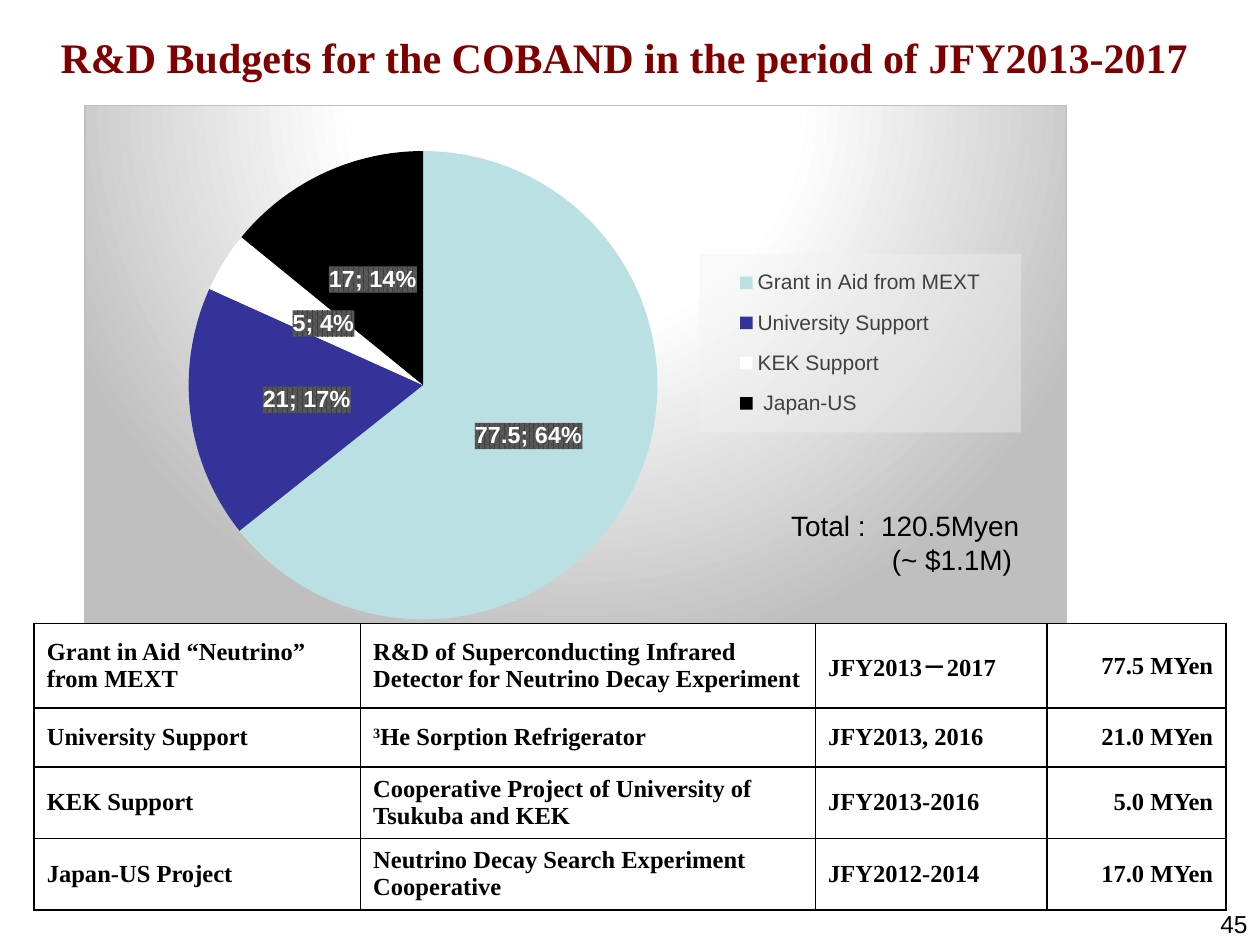
from pptx import Presentation
from pptx.chart.data import CategoryChartData
from pptx.dml.color import RGBColor
from pptx.enum.chart import XL_CHART_TYPE as ChartType
from pptx.enum.chart import XL_LABEL_POSITION as LabelPosition
from pptx.enum.chart import XL_LEGEND_POSITION as LegendPosition
from pptx.enum.text import MSO_ANCHOR as Anchor
from pptx.enum.text import PP_ALIGN as Align
from pptx.oxml import parse_xml
from pptx.oxml.ns import nsdecls, qn
from pptx.util import Cm, Pt

BLACK = RGBColor(0x00, 0x00, 0x00)
WHITE = RGBColor(0xFF, 0xFF, 0xFF)
MAROON = RGBColor(0x80, 0x00, 0x00)
AQUA = RGBColor(0xBB, 0xE0, 0xE3)
INDIGO = RGBColor(0x33, 0x33, 0x99)
CHARCOAL = RGBColor(0x40, 0x40, 0x40)
SLATE = RGBColor(0x59, 0x59, 0x59)
MIST = RGBColor(0xF2, 0xF2, 0xF2)
SILVER = RGBColor(0xBF, 0xBF, 0xBF)

SANS = "Arial"
SERIF = "Times New Roman"

SOURCES = [
    ("Grant in Aid from MEXT", 77.5, AQUA),
    ("University Support", 21, INDIGO),
    ("KEK Support", 5, WHITE),
    (" Japan-US", 17, BLACK),
]
BUDGETS = [
    ("Grant in Aid “Neutrino” from MEXT",
     "R&D of Superconducting Infrared Detector for Neutrino Decay Experiment",
     "JFY2013－2017　", "77.5 MYen"),
    ("University Support", "3He Sorption Refrigerator", "JFY2013, 2016", "21.0 MYen"),
    ("KEK Support", "Cooperative Project of University of Tsukuba and KEK",
     "JFY2013-2016", "5.0 MYen"),
    ("Japan-US Project", "Neutrino Decay Search Experiment Cooperative",
     "JFY2012-2014", "17.0 MYen"),
]
COLUMN_WIDTHS = [6.58, 9.17, 4.67, 3.6]
ROW_HEIGHTS = [1.7, 1.19, 1.34, 1.34]


def color_xml(color, alpha=100):
    return f'<a:srgbClr val="{color}"><a:alpha val="{alpha * 1000}"/></a:srgbClr>'


def shape_properties(content):
    return parse_xml(f'<c:spPr {nsdecls("c", "a")}>{content}</c:spPr>')


class SlideBuilder:
    def __init__(self, deck):
        self.page = deck.slides.add_slide(deck.slide_layouts[6])

    def style(self, font, size, color=BLACK, name=SANS, bold=False):
        font.name, font.size, font.bold = name, Pt(size), bold
        font.color.rgb = color

    def text(self, place, text, size, align=Align.LEFT, anchor=Anchor.TOP,
             wrap=True, **look):
        box = self.page.shapes.add_textbox(*map(Cm, place))
        frame = box.text_frame
        frame.text = text
        frame.word_wrap = wrap
        frame.vertical_anchor = anchor
        for para in frame.paragraphs:
            para.alignment = align
            for span in para.runs:
                self.style(span.font, size, **look)
        return frame

    def place_layout(self, parent, index, place, target=""):
        for old in parent.findall(qn("c:layout")):
            parent.remove(old)
        modes = "".join(f'<c:{axis}Mode val="edge"/>' for axis in "xy")
        sizes = "".join(f'<c:{key} val="{value}"/>' for key, value in zip("xywh", place))
        parent.insert(index, parse_xml(
            f'<c:layout {nsdecls("c")}><c:manualLayout>{target}{modes}{sizes}'
            '</c:manualLayout></c:layout>'))

    def pie(self, place, sources):
        data = CategoryChartData()
        data.categories = [name for name, _, _ in sources]
        data.add_series("Series 1", [value for _, value, _ in sources])
        chart = self.page.shapes.add_chart(ChartType.PIE, *map(Cm, place), data).chart
        chart.has_title = False
        self.style(chart.font, 10)
        space = chart._chartSpace
        stops = "".join(f'<a:gs pos="{position * 1000}">{color_xml(color)}</a:gs>'
                        for position, color in [(0, WHITE), (39, WHITE), (100, SILVER)])
        space.find(qn("c:txPr")).addprevious(shape_properties(
            f'<a:gradFill><a:gsLst>{stops}</a:gsLst><a:path path="circle">'
            '<a:fillToRect l="50000" t="-80000" r="50000" b="180000"/></a:path></a:gradFill>'
            f'<a:ln w="9525"><a:solidFill>{color_xml(SILVER)}</a:solidFill></a:ln>'))
        self.place_layout(space.chart.plotArea, 0, (0.105, 0.082, 0.479, 0.839),
                          '<c:layoutTarget val="inner"/>')
        self.legend(chart)
        plot = chart.plots[0]
        plot.vary_by_categories = True
        for index, (_, _, color) in enumerate(sources):
            fill = plot.series[0].points[index].format.fill
            fill.solid()
            fill.fore_color.rgb = color
        self.labels(plot.series[0].data_labels)

    def legend(self, chart):
        chart.has_legend = True
        legend = chart.legend
        legend.position = LegendPosition.RIGHT
        legend.include_in_layout = False
        self.style(legend.font, 12, CHARCOAL)
        element = legend._element
        self.place_layout(element, 1, (0.626, 0.266, 0.328, 0.32))
        element.find(qn("c:txPr")).addprevious(shape_properties(
            f'<a:solidFill>{color_xml(MIST, 39)}</a:solidFill>'))

    def labels(self, labels):
        labels.show_value = True
        labels.show_percentage = True
        labels.position = LabelPosition.CENTER
        self.style(labels.font, 13.3, WHITE, bold=True)
        element = labels._element
        element.find(qn("c:txPr")).addprevious(shape_properties(
            f'<a:pattFill prst="pct75"><a:fgClr>{color_xml(CHARCOAL)}</a:fgClr>'
            f'<a:bgClr>{color_xml(SLATE)}</a:bgClr></a:pattFill>'))
        flags = element.findall(qn("c:showPercent")) + element.findall(qn("c:showBubbleSize"))
        flags[-1].addnext(parse_xml(f'<c:separator {nsdecls("c")}>; </c:separator>'))

    def table(self, left, top, widths, heights, rows):
        place = (left, top, sum(widths), sum(heights))
        frame = self.page.shapes.add_table(len(rows), len(widths), *map(Cm, place))
        table = frame.table
        table.first_row = table.horz_banding = False
        for column, width in zip(table.columns, widths):
            column.width = Cm(width)
        for row, height in zip(table.rows, heights):
            row.height = Cm(height)
        for row, texts in enumerate(rows):
            for column, text in enumerate(texts):
                align = Align.RIGHT if column == len(widths) - 1 else Align.LEFT
                self.cell(table.cell(row, column), text, align)
        return table

    def cell(self, cell, text, align):
        cell.text = text
        cell.vertical_anchor = Anchor.MIDDLE
        cell.fill.solid()
        cell.fill.fore_color.rgb = WHITE
        para = cell.text_frame.paragraphs[0]
        para.alignment = align
        self.style(para.runs[0].font, 14, name=SERIF, bold=True)
        properties = cell._tc.get_or_add_tcPr()
        for index, side in enumerate("LRTB"):
            properties.insert(index, parse_xml(
                f'<a:ln{side} {nsdecls("a")} w="12700"><a:solidFill>{color_xml(BLACK)}'
                f'</a:solidFill></a:ln{side}>'))

    def raise_first(self, para):
        lead = para.runs[0]
        rest = para.add_run()
        lead.text, rest.text = lead.text[:1], lead.text[1:]
        self.style(rest.font, 14, name=SERIF, bold=True)
        lead.font._element.set("baseline", "30000")


def main():
    deck = Presentation()
    deck.slide_width, deck.slide_height = Cm(25.4), Cm(19.05)
    builder = SlideBuilder(deck)
    builder.pie((1.7, 2.11, 19.81, 11.28), SOURCES)
    builder.text((0.48, -0.05, 24.21, 2.39), "R&D Budgets for the COBAND in the period of JFY2013-2017",
                 24, Align.CENTER, Anchor.MIDDLE, color=MAROON, name=SERIF, bold=True)
    table = builder.table(0.69, 12.57, COLUMN_WIDTHS, ROW_HEIGHTS, BUDGETS)
    builder.raise_first(table.cell(1, 1).text_frame.paragraphs[0])
    total = builder.text((15.7, 10.13, 5.26, 1.63), "Total :  120.5Myen\n(~ $1.1M)", 16, wrap=False)
    total.paragraphs[1]._p.get_or_add_pPr().set("marL", str(Cm(2.03)))
    builder.text((20.12, 18.21, 5.28, 0.84), "45", 14, Align.RIGHT)
    deck.save("out.pptx")


if __name__ == "__main__":
    main()
